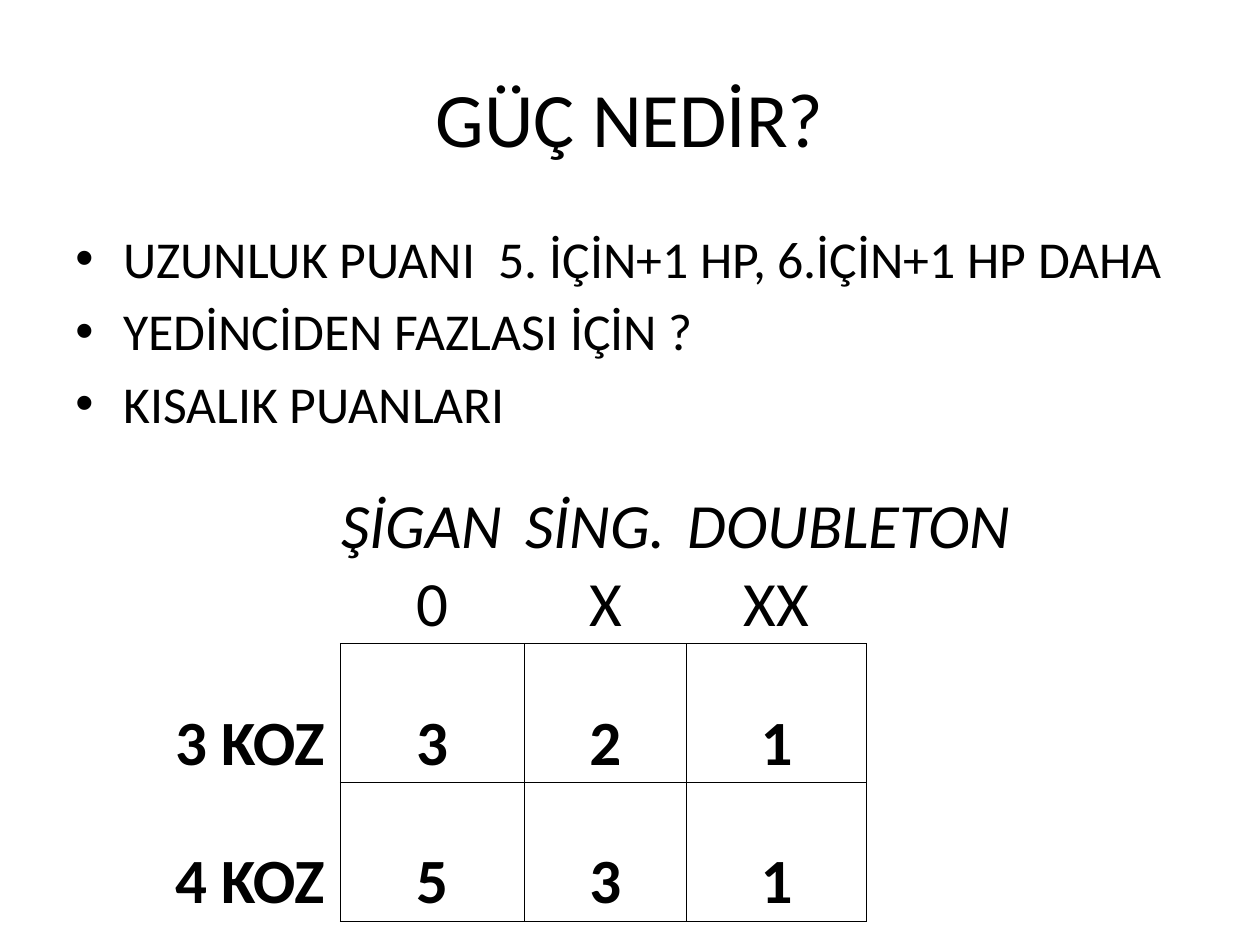
from lxml.etree import SubElement
from pptx import Presentation
from pptx.dml.color import RGBColor
from pptx.enum.text import MSO_ANCHOR, PP_ALIGN
from pptx.oxml.ns import qn
from pptx.util import Inches, Pt

BLACK = RGBColor(0, 0, 0)
FONT = "Calibri"
BULLETS = [
    "UZUNLUK PUANI  5. İÇİN+1 HP, 6.İÇİN+1 HP DAHA",
    "YEDİNCİDEN FAZLASI İÇİN ?",
    "KISALIK PUANLARI",
]
POINTS = [
    ["", "ŞİGAN", "SİNG.", "DOUBLETON", ""],
    ["", "0", "X", "XX", ""],
    ["3 KOZ", "3", "2", "1", ""],
    ["4 KOZ", "5", "3", "1", ""],
]
COLS = [1.32, 1.46, 1.29, 1.43, 1.33]
ROWS = [0.74, 0.62, 1.1, 1.1]
SIDES = {"L": (0, -1), "R": (0, 1), "T": (-1, 0), "B": (1, 0)}


def add_run(para, text, size, bold=False, italic=False):
    run = para.add_run()
    run.text = text
    font = run.font
    font.name, font.size = FONT, Pt(size)
    font.bold, font.italic = bold, italic
    font.color.rgb = BLACK


def add_box(slide, left, top, width, height):
    box = slide.shapes.add_textbox(Inches(left), Inches(top),
                                   Inches(width), Inches(height))
    box.text_frame.word_wrap = True
    return box.text_frame


def add_title(slide, left, top, width, height):
    frame = add_box(slide, left, top, width, height)
    frame.vertical_anchor = MSO_ANCHOR.MIDDLE
    para = frame.paragraphs[0]
    para.alignment = PP_ALIGN.CENTER
    add_run(para, "GÜÇ NEDİR?", 44)


def add_bullets(slide, left, top, width, height):
    frame = add_box(slide, left, top, width, height)
    for i, text in enumerate(BULLETS):
        para = frame.add_paragraph() if i else frame.paragraphs[0]
        para.space_before = Pt(5.9)
        props = para._p.get_or_add_pPr()
        props.set("marL", str(Inches(0.38)))
        props.set("indent", str(-Inches(0.38)))
        SubElement(props, qn("a:buFont"), typeface="Arial")
        SubElement(props, qn("a:buChar"), char="•")
        add_run(para, text, 29.6)


def in_grid(row, col):
    return row in (2, 3) and col in (1, 2, 3)


def set_borders(cell, row, col):
    """Line every side that touches the grid of points; clear the others."""
    props = cell._tc.get_or_add_tcPr()
    for side, (down, across) in SIDES.items():
        line = SubElement(props, qn(f"a:ln{side}"), w=str(Pt(0.5)))
        if in_grid(row, col) or in_grid(row + down, col + across):
            fill = SubElement(line, qn("a:solidFill"))
            SubElement(fill, qn("a:srgbClr"), val=str(BLACK))
        else:
            SubElement(line, qn("a:noFill"))


def fill_cell(cell, text, row, col):
    cell.margin_left = cell.margin_right = cell.margin_top = Inches(0.01)
    cell.margin_bottom = 0
    cell.vertical_anchor = MSO_ANCHOR.BOTTOM
    set_borders(cell, row, col)
    cell.fill.background()
    if text:
        para = cell.text_frame.paragraphs[0]
        centred = row > 0 and col > 0
        para.alignment = PP_ALIGN.CENTER if centred else PP_ALIGN.LEFT
        add_run(para, text, 36, bold=row > 1, italic=row == 0)


def add_points(slide, left, top):
    frame = slide.shapes.add_table(
        len(ROWS), len(COLS), Inches(left), Inches(top),
        Inches(sum(COLS)), Inches(sum(ROWS)))
    table = frame.table
    table.first_row = table.horz_banding = False
    for col, width in zip(table.columns, COLS):
        col.width = Inches(width)
    for row, height in zip(table.rows, ROWS):
        row.height = Inches(height)
    for r, texts in enumerate(POINTS):
        for c, text in enumerate(texts):
            fill_cell(table.cell(r, c), text, r, c)
    table.cell(0, 3).merge(table.cell(0, 4))


def main():
    deck = Presentation()
    deck.slide_width, deck.slide_height = Inches(10), Inches(7.5)
    slide = deck.slides.add_slide(deck.slide_layouts[6])
    add_title(slide, 0.5, 0.3, 9, 1.25)
    add_bullets(slide, 0.5, 1.75, 9, 2.08)
    add_points(slide, 1.38, 3.75)
    deck.save("out.pptx")


if __name__ == "__main__":
    main()
